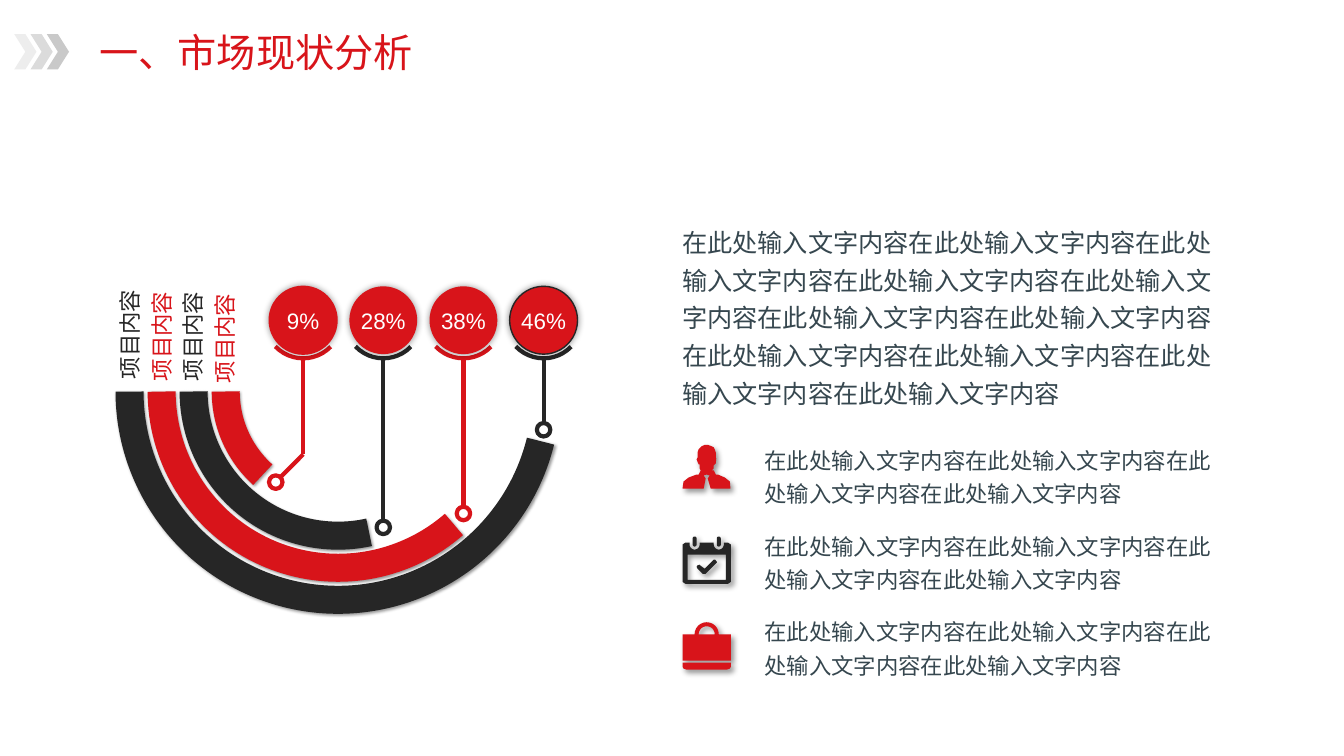
from math import cos, radians, sin

from lxml import etree
from pptx import Presentation
from pptx.dml.color import RGBColor
from pptx.enum.shapes import MSO_CONNECTOR, MSO_SHAPE
from pptx.enum.text import MSO_ANCHOR, PP_ALIGN
from pptx.oxml.ns import qn
from pptx.util import Cm, Pt

ARC, CHEVRON, OVAL = MSO_SHAPE.ARC, MSO_SHAPE.CHEVRON, MSO_SHAPE.OVAL
STRAIGHT = MSO_CONNECTOR.STRAIGHT
CENTER, MIDDLE = PP_ALIGN.CENTER, MSO_ANCHOR.MIDDLE
RED, DARK, SLATE, WHITE = "D8141A", "262626", "36474F", "FFFFFF"
SANS, HEADING_FONT, BODY_FONT = "Arial", "Noto Sans CJK JP", "Noto Sans CJK SC"
PHRASE = "在此处输入文字内容"
ICON_UNIT = 0.0254  # icons are drawn on a grid of 48 units


def color(hex_string):
    return RGBColor.from_string(hex_string)


def style(shape, fill=None, line=None, line_width=1):
    shape.shadow.inherit = False
    if fill:
        shape.fill.solid()
        shape.fill.fore_color.rgb = color(fill)
    else:
        shape.fill.background()
    if line:
        shape.line.color.rgb = color(line)
        shape.line.width = Pt(line_width)
    else:
        shape.line.fill.background()


def add_shadow(shape, blur, distance, degrees):
    effects = shape._element.spPr.find(qn("a:effectLst"))
    shadow = etree.SubElement(
        effects, qn("a:outerShdw"), blurRad=str(Pt(blur)), dist=str(Pt(distance)),
        dir=str(degrees * 60000), algn="ctr", rotWithShape="0")
    black = etree.SubElement(shadow, qn("a:srgbClr"), val="000000")
    etree.SubElement(black, qn("a:alpha"), val="40000")


def write(shape, text, size, font, text_color):
    paragraph = shape.text_frame.paragraphs[0]
    paragraph.text = text
    run = paragraph.runs[0]
    run.font.size = Pt(size)
    run.font.name = font
    run.font.color.rgb = color(text_color)
    etree.SubElement(run.font._element, qn("a:ea"), typeface=font)
    return paragraph


def add_text(slide, box, text, size, font, text_color, wrap=True):
    shape = slide.shapes.add_textbox(*map(Cm, box))
    shape.text_frame.word_wrap = wrap
    return shape, write(shape, text, size, font, text_color)


def add_round(slide, kind, x, y, diameter):
    """Place an oval or an arc by its centre."""
    return slide.shapes.add_shape(
        kind, Cm(x - diameter / 2), Cm(y - diameter / 2), Cm(diameter), Cm(diameter))


def add_arc(slide, x, y, diameter, start, end, line, width):
    arc = add_round(slide, ARC, x, y, diameter)
    arc.adjustments[0] = start * 0.6  # degrees to adjustment units
    arc.adjustments[1] = end * 0.6
    style(arc, line=line, line_width=width)
    return arc


def add_line(slide, start, end, line):
    connector = slide.shapes.add_connector(STRAIGHT, *map(Cm, start + end))
    connector.line.color.rgb = color(line)
    connector.line.width = Pt(3)
    etree.SubElement(connector._element.spPr, qn("a:effectLst"))
    return connector


def header(slide, left, top):
    for index, gray in enumerate(("EDEDED", "DBDBDB", "C9C9C9")):
        chevron = slide.shapes.add_shape(
            CHEVRON, Cm(left + 0.41 * index), Cm(top), Cm(0.56), Cm(0.89))
        style(chevron, gray)
    add_text(slide, (left + 1.9, top - 0.28, 8.48, 1.45), "一、市场现状分析",
             28, HEADING_FONT, RED, wrap=False)


def ring_chart(slide, left, top):
    # Rings, from the outside in, with their labels
    rings = ((DARK, 13.84, 0), (RED, 48.98, 0.05), (DARK, 77.58, 0.05), (RED, 132.08, 0.1))
    for index, (ring_color, start, label_drop) in enumerate(rings):
        ring = add_arc(slide, left + 5.25, top + 2.77, 10.51 - 1.615 * index,
                       start, 179.9, ring_color, 20)
        add_shadow(ring, 2, 1, 45)
        box = (left - 1.54 + 0.8 * index, top + 1.04 + label_drop, 2.82, 0.53)
        label, _ = add_text(slide, box, "项目内容", 16, HEADING_FONT, ring_color)
        label.text_frame.margin_top = Cm(0.05)
        label.rotation = 270

    # Percentage badges, each with a stem down to its ring
    badges = (("9%", RED, RED, 5.06), ("28%", DARK, None, 6.2),
              ("38%", RED, None, 5.85), ("46%", DARK, DARK, 3.74))
    for index, (percent, stem_color, outline, marker_drop) in enumerate(badges):
        x = left + 4.37 + 2.02 * index
        marker_x = x - 0.69 if index == 0 else x
        marker = add_round(slide, OVAL, marker_x, top + marker_drop, 0.34)
        style(marker, line=stem_color, line_width=3)
        stem_top = (x, top + 1.96)
        if index == 0:
            bend = (x, top + 4.36)
            add_line(slide, stem_top, bend, stem_color)
            add_line(slide, bend, (x - 0.58, top + 4.94), stem_color)
        else:
            stem = add_line(slide, stem_top, (x, top + marker_drop - 0.17), stem_color)
            stem.end_connect(marker, 0)
        add_arc(slide, x, top + 0.97, 1.94, 44.3, 136.3, stem_color, 3)
        badge = add_round(slide, OVAL, x, top + 0.98, 1.71)
        style(badge, RED, outline)
        add_shadow(badge, 5, 0, 0)
        badge.text_frame.word_wrap = False
        badge.text_frame.vertical_anchor = MIDDLE
        write(badge, percent, 16, SANS, WHITE).alignment = CENTER


def half_circle(x, y, radius, direction):
    """Points from left to right; direction -1 bulges up, 1 bulges down."""
    return [(x - radius * cos(radians(angle)), y + direction * radius * sin(radians(angle)))
            for angle in range(0, 181, 15)]


def person_outline():
    return [[(47, 38), (42, 34), (35, 31), (33, 31), (31, 27), (29, 27), (31, 25), (31, 22),
             (33, 20), (33.5, 15), (33, 14), (33, 9), (32, 6), (31, 4), (29, 3), (25, 1.5),
             (22, 1.5), (19, 3), (16, 6), (15, 9), (15, 14), (14, 16), (16, 21), (17, 21),
             (17, 25), (18, 27), (16, 31), (14, 31), (6, 34), (1, 38), (0, 45), (21, 45),
             (23, 35), (21, 32), (24, 31), (27, 32), (25, 35), (28, 45), (47.5, 45)]]


def calendar_outline():
    body = [(3, 47), (0, 45), (0, 8), (3, 6), (7, 6), *half_circle(12, 8, 5, 1), (17, 6),
            (31, 6), *half_circle(36, 8, 5, 1), (41, 6), (45, 6), (48, 8), (48, 45), (45, 47)]
    page = [(5, 18), (43, 18), (43, 43), (5, 43)]
    check = [(17, 28), (18, 29), (22, 32), (31, 23), (32.5, 23), (34, 25), (34, 26),
             (23, 37), (20, 37), (15, 32), (14, 30), (15, 28.5)]
    pegs = [half_circle(x, 2, 2, -1) + half_circle(x, 8, 2, 1)[::-1] for x in (12, 36)]
    return [body, page, check, *pegs]


def bag_outline():
    body = [(0, 12), *half_circle(24, 12, 12, -1), (48, 12), (48, 38), (0, 38)]
    base = [(0, 40), (48, 40), (48, 44), (47, 46), (44, 47), (4, 47), (1, 46), (0, 44)]
    return [body, half_circle(24, 12, 8, -1), base]


def add_icon(slide, left, top, contours, fill):
    scaled = [[(round(x * 10), round(y * 10)) for x, y in contour] for contour in contours]
    builder = slide.shapes.build_freeform(*scaled[0][0], scale=Cm(ICON_UNIT) / 10)
    for index, contour in enumerate(scaled):
        if index:
            builder.move_to(*contour[0])
        builder.add_line_segments(contour[1:], close=True)
    icon = builder.convert_to_shape(Cm(left), Cm(top))
    style(icon, fill)
    add_shadow(icon, 4, 3, 45)


def description(slide, left, top):
    _, paragraph = add_text(slide, (left, top, 14.43, 5.03), PHRASE * 11, 18, BODY_FONT, SLATE)
    paragraph.line_spacing = 1.25
    items = ((person_outline(), RED), (calendar_outline(), DARK), (bag_outline(), RED))
    for index, (contours, fill) in enumerate(items):
        item_top = top + 5.56 + 2.16 * index
        add_icon(slide, left + 0.26, item_top + 0.2 + 0.19 * min(index, 1), contours, fill)
        _, paragraph = add_text(slide, (left + 2.08, item_top, 12.07, 1.96),
                                PHRASE * 4, 16, BODY_FONT, SLATE)
        paragraph.line_spacing = 1.25


def main():
    presentation = Presentation()
    presentation.slide_width, presentation.slide_height = Cm(33.87), Cm(19.05)
    slide = presentation.slides.add_slide(presentation.slide_layouts[6])
    header(slide, 0.36, 0.86)
    ring_chart(slide, 3.27, 7.09)
    description(slide, 16.94, 5.41)
    presentation.save("out.pptx")


if __name__ == "__main__":
    main()
